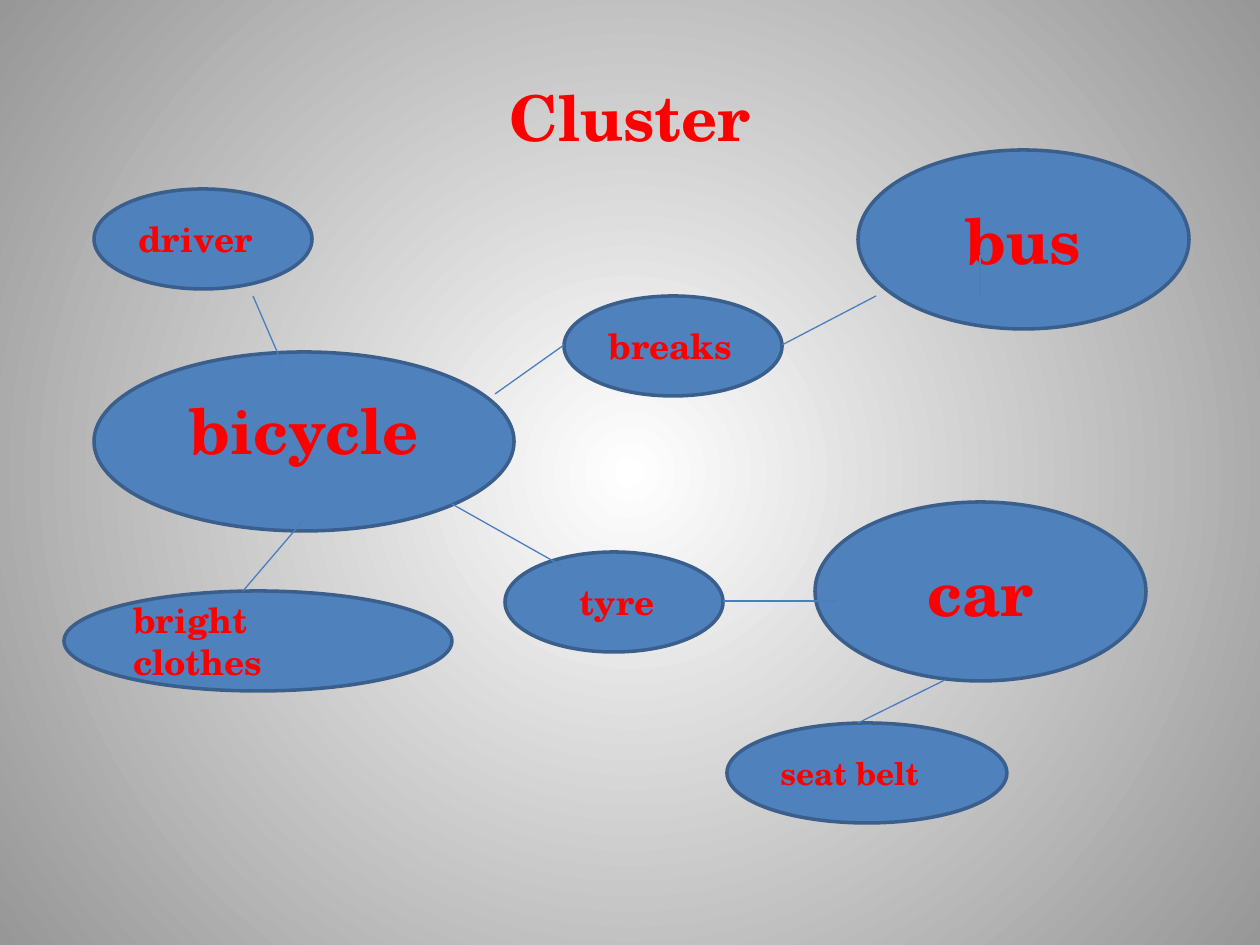
from dataclasses import dataclass

from lxml.etree import SubElement
from pptx import Presentation
from pptx.dml.color import RGBColor
from pptx.enum.shapes import MSO_CONNECTOR, MSO_SHAPE
from pptx.enum.text import MSO_ANCHOR, PP_ALIGN
from pptx.oxml.ns import qn
from pptx.slide import Slide
from pptx.text.text import TextFrame
from pptx.util import Emu, Pt

PX_PER_INCH = 126
FONT = "TeX Gyre Schola"
RED = "FF0000"
BUBBLE_FILL = "4F81BD"
BUBBLE_EDGE = "3A5F8C"
LINK_COLOUR = "4B7EBC"
TOPIC_HEIGHT = 179
DETAIL_HEIGHT = 100


@dataclass(frozen=True)
class Bubble:
    """An oval of the cluster, in px."""

    text: str
    left: int
    top: int
    width: int
    height: int = DETAIL_HEIGHT
    size: int = 20
    align: PP_ALIGN = PP_ALIGN.LEFT
    inset_left: int = 0
    inset_bottom: int = 0


@dataclass(frozen=True)
class Link:
    """A straight line between two points, in px."""

    x1: int
    y1: int
    x2: int
    y2: int


def topic(text: str, left: int, top: int, width: int, inset_bottom: int = 0) -> Bubble:
    """Describe a large, centred bubble."""
    return Bubble(text, left, top, width, TOPIC_HEIGHT, 36, PP_ALIGN.CENTER,
                  inset_bottom=inset_bottom)


BUBBLES = [
    topic("car", 815, 502, 331),
    topic("bus", 858, 150, 331),
    topic("bicycle", 94, 352, 420, inset_bottom=30),
    Bubble("tyre", 505, 552, 218, inset_left=43),
    Bubble("bright clothes", 64, 591, 388),
    Bubble("driver", 94, 189, 218),
    Bubble("breaks", 564, 296, 218),
    Bubble("seat belt", 727, 723, 280, size=18),
]

LINKS = [
    Link(253, 296, 282, 363),
    Link(243, 591, 302, 522),
    Link(495, 394, 564, 345),
    Link(980, 296, 980, 255),
    Link(782, 345, 876, 296),
    Link(452, 504, 562, 566),
    Link(723, 601, 837, 601),
    Link(945, 680, 858, 723),
]


def px(length: int) -> Emu:
    """Turn px into EMU."""
    return Emu(round(length * 914400 / PX_PER_INCH))


def colour(code: str) -> RGBColor:
    """Turn a hex string into a colour."""
    return RGBColor.from_string(code)


def write(frame: TextFrame, text: str, size: int, align: PP_ALIGN) -> None:
    """Fill a frame with one bold red paragraph."""
    frame.text = text
    frame.word_wrap = True
    frame.vertical_anchor = MSO_ANCHOR.MIDDLE
    paragraph = frame.paragraphs[0]
    paragraph.alignment = align
    font = paragraph.font
    font.name, font.size, font.bold = FONT, Pt(size), True
    font.color.rgb = colour(RED)


def paint_background(slide: Slide) -> None:
    """Give the slide a circular gradient from white to grey."""
    fill = slide.background.fill
    fill.gradient()
    for stop, (position, code) in zip(fill.gradient_stops, [(0, "FFFFFF"), (1, "979797")]):
        stop.position = position
        stop.color.rgb = colour(code)
    linear = slide.element.find(".//" + qn("a:lin"))
    gradient = linear.getparent()
    gradient.remove(linear)
    circle = SubElement(gradient, qn("a:path"), {"path": "circle"})
    SubElement(circle, qn("a:fillToRect"), dict.fromkeys("ltrb", "50000"))


def add_title(slide: Slide) -> None:
    """Place and format the title."""
    title = slide.shapes.title
    title.left, title.top, title.width, title.height = map(px, (63, 38, 1134, 157))
    write(title.text_frame, "Cluster", 36, PP_ALIGN.CENTER)


def add_bubble(slide: Slide, bubble: Bubble) -> None:
    """Draw one oval with its word."""
    oval = slide.shapes.add_shape(
        MSO_SHAPE.OVAL, px(bubble.left), px(bubble.top), px(bubble.width), px(bubble.height))
    oval.shadow.inherit = False
    oval.fill.solid()
    oval.fill.fore_color.rgb = colour(BUBBLE_FILL)
    oval.line.color.rgb = colour(BUBBLE_EDGE)
    oval.line.width = Pt(2)
    frame = oval.text_frame
    write(frame, bubble.text, bubble.size, bubble.align)
    if bubble.inset_left:
        frame.margin_left = px(bubble.inset_left)
    if bubble.inset_bottom:
        frame.margin_bottom = px(bubble.inset_bottom)


def add_link(slide: Slide, link: Link) -> None:
    """Draw one thin line."""
    line = slide.shapes.add_connector(
        MSO_CONNECTOR.STRAIGHT, px(link.x1), px(link.y1), px(link.x2), px(link.y2))
    line.line.color.rgb = colour(LINK_COLOUR)
    line.line.width = Pt(0.75)
    SubElement(line._element.spPr, qn("a:effectLst"))


def main() -> None:
    """Build the cluster slide."""
    presentation = Presentation()
    presentation.slide_width, presentation.slide_height = px(1260), px(945)
    slide = presentation.slides.add_slide(presentation.slide_layouts[5])
    paint_background(slide)
    add_title(slide)
    for bubble in BUBBLES:
        add_bubble(slide, bubble)
    for link in LINKS:
        add_link(slide, link)
    presentation.save("out.pptx")


if __name__ == "__main__":
    main()
